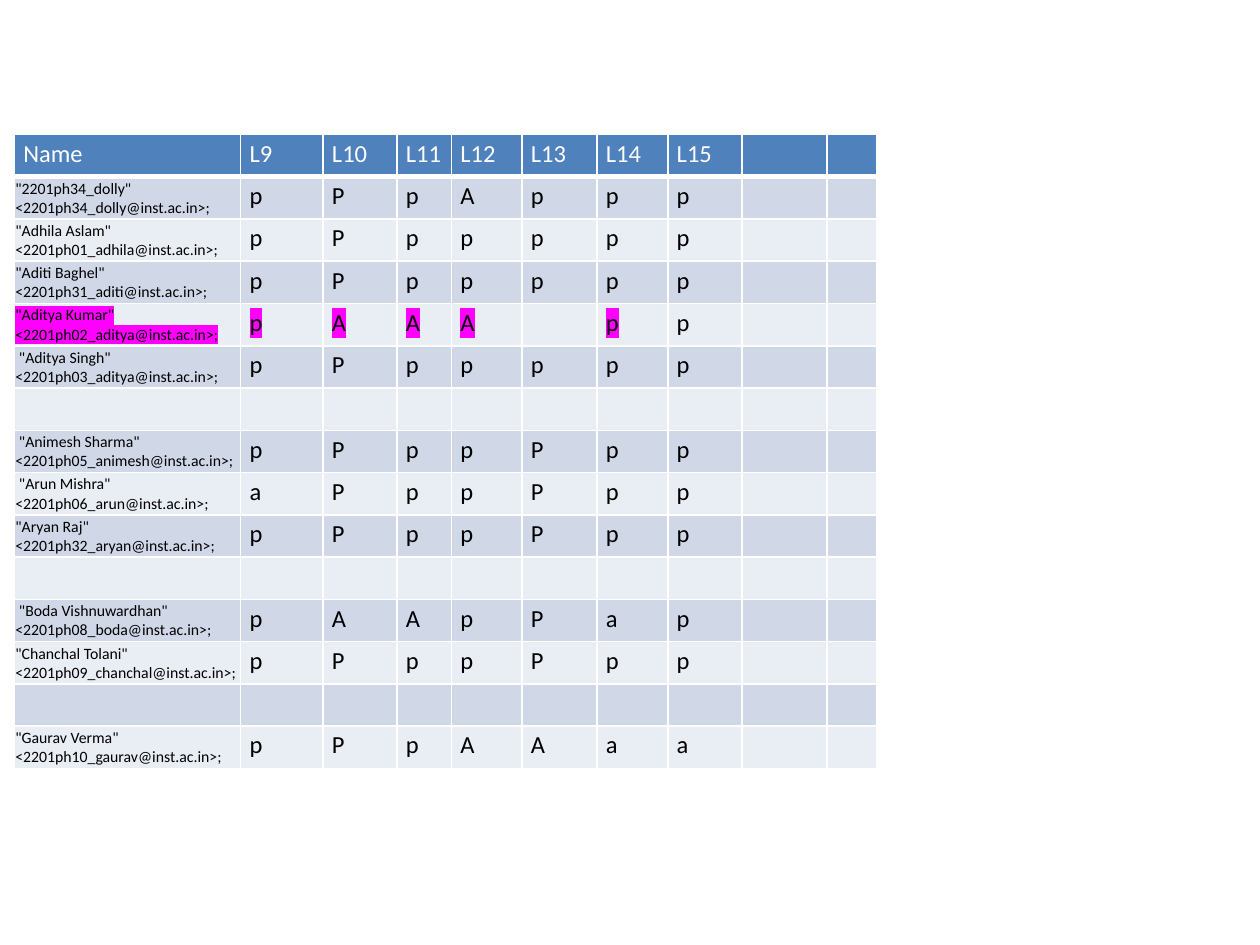
from dataclasses import dataclass
from lxml import etree
from pptx import Presentation
from pptx.dml.color import RGBColor
from pptx.enum.text import MSO_ANCHOR
from pptx.oxml.ns import qn
from pptx.util import Cm, Pt

MIDDLE, TOP = MSO_ANCHOR.MIDDLE, MSO_ANCHOR.TOP


@dataclass(frozen=True)
class Theme:
    font: str = "Calibri"
    head: str = "4F81BD"
    bands: tuple = ("D0D8E8", "E9EDF4")
    white: str = "FFFFFF"
    black: str = "000000"
    mark: str = "FF00FF"
    big: int = 14
    small: int = 9


THEME = Theme()
DOMAIN = "inst.ac.in"
WIDTHS = (4.56, 1.66, 1.49, 1.1, 1.42, 1.51, 1.43, 1.5, 1.71, 1.01)
HEADS = ("Name", "L9", "L10", "L11", "L12", "L13", "L14", "L15")
LIT_ROW, LIT_COLS = 4, 7
WIDE, TIGHT = (0.18, 0.09, 0.18, 0.09), (0.02, 0.02, 0.02, 0)
ROLL = (
    ('"2201ph34_dolly"', "2201ph34_dolly", "pPpAppp"),
    ('"Adhila Aslam"', "2201ph01_adhila", "pPppppp"),
    ('"Aditi Baghel"', "2201ph31_aditi", "pPppppp"),
    ('"Aditya Kumar"', "2201ph02_aditya", "pAAA pp"),
    (' "Aditya Singh"', "2201ph03_aditya", "pPppppp"),
    None,
    (' "Animesh Sharma"', "2201ph05_animesh", "pPppPpp"),
    (' "Arun Mishra"', "2201ph06_arun", "aPppPpp"),
    ('"Aryan Raj"', "2201ph32_aryan", "pPppPpp"),
    None,
    (' "Boda Vishnuwardhan"', "2201ph08_boda", "pAApPap"),
    ('"Chanchal Tolani"', "2201ph09_chanchal", "pPppPpp"),
    None,
    ('"Gaurav Verma"', "2201ph10_gaurav", "pPpAAaa"),
)


def add_color(parent, tag, color):
    node = etree.SubElement(parent, qn(tag))
    etree.SubElement(node, qn("a:srgbClr")).set("val", color)
    return node


def set_edges(cell, base):
    props = cell._tc.get_or_add_tcPr()
    sizes = (("a:lnL", 1), ("a:lnR", 1), ("a:lnT", 1), ("a:lnB", base))
    for i, (tag, size) in enumerate(sizes):
        line = etree.Element(qn(tag))
        line.set("w", str(Pt(size)))
        add_color(line, "a:solidFill", THEME.white)
        props.insert(i, line)


def set_text(cell, text, size, color, lit):
    para = cell.text_frame.paragraphs[0]
    if not text:
        end = etree.SubElement(para._p, qn("a:endParaRPr"))
        end.set("sz", str(size * 100))
        return
    para.text = text
    run = para.runs[0]
    run.font.size = Pt(size)
    run.font.name = THEME.font
    run.font.color.rgb = RGBColor.from_string(color)
    if lit:
        props = run._r.get_or_add_rPr()
        glow = add_color(props, "a:highlight", THEME.mark)
        props.find(qn("a:solidFill")).addnext(glow)


def set_cell(cell, text, row, col):
    head = row == 0
    label = col == 0 and not head and bool(text)
    fill = THEME.head if head else THEME.bands[(row - 1) % 2]
    cell.fill.solid()
    cell.fill.fore_color.rgb = RGBColor.from_string(fill)
    set_edges(cell, 3 if head else 1)
    pads = [Cm(pad) for pad in (TIGHT if label else WIDE)]
    cell.margin_left, cell.margin_top, cell.margin_right, cell.margin_bottom = pads
    cell.vertical_anchor = MIDDLE if label else TOP
    set_text(cell, text, THEME.small if label else THEME.big,
             THEME.white if head else THEME.black,
             row == LIT_ROW and col < LIT_COLS)


def get_rows():
    rows = [list(HEADS)]
    for entry in ROLL:
        if entry is None:
            rows.append([])
        else:
            name, user, marks = entry
            rows.append([f"{name} <{user}@{DOMAIN}>;", *(m.strip() for m in marks)])
    return [row + [""] * (len(WIDTHS) - len(row)) for row in rows]


def add_roll(slide, left, top, width, height):
    rows = get_rows()
    frame = slide.shapes.add_table(len(rows), len(WIDTHS), Cm(left), Cm(top),
                                   Cm(width), Cm(height))
    table = frame.table
    for col, size in zip(table.columns, WIDTHS):
        col.width = Cm(width * size / sum(WIDTHS))
    for r, row in enumerate(rows):
        table.rows[r].height = Cm(height / len(rows))
        for c, text in enumerate(row):
            set_cell(table.cell(r, c), text, r, c)


def main():
    deck = Presentation()
    deck.slide_width, deck.slide_height = Cm(25.4), Cm(19.05)
    slide = deck.slides.add_slide(deck.slide_layouts[6])
    add_roll(slide, 0.29, 2.71, 17.4, 12.78)
    deck.save("out.pptx")


if __name__ == "__main__":
    main()
